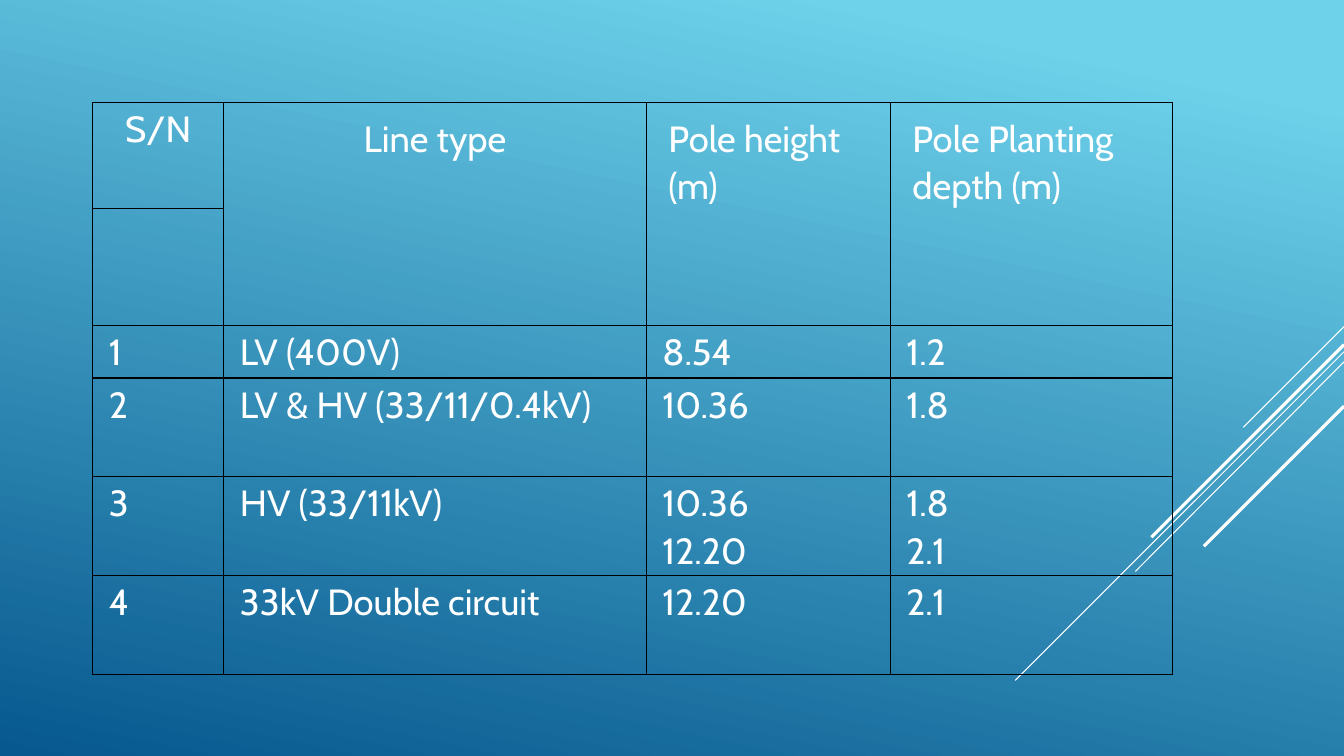
"""Build a slide with a table of pole heights and planting depths."""
from lxml.etree import SubElement
from pptx import Presentation
from pptx.dml.color import RGBColor
from pptx.enum.shapes import MSO_CONNECTOR
from pptx.enum.text import PP_ALIGN
from pptx.oxml.ns import qn
from pptx.util import Inches, Pt

COLORS = {"sky": "6ED2EB", "deep": "06588E", "text": "FFFFFF", "border": "000000"}
FONT = "Cabin"
SLIDE_W, SLIDE_H = 13.33, 7.5
COL_WIDTHS = [1.3, 4.19, 2.42, 2.8]
ROW_HEIGHTS = [1.05, 1.16, 0.52, 0.98, 0.98, 0.98]
BODY_INSETS = (0.16, 0.02, 0.16, 0)
HEADER_INSETS = (0.22, 0.11, 0.22, 0.11)
HEADERS = ["S/N", "Line type", "Pole height (m)", "Pole Planting depth (m)"]
POLES = [
    ["1", "LV (400V)", "8.54", "1.2"],
    ["2", "LV & HV (33/11/0.4kV)", "10.36", "1.8"],
    ["3", "HV (33/11kV)", "10.36\n12.20", "1.8\n2.1"],
    ["4", "33kV Double circuit", "12.20", "2.1"],
]
STREAKS = [
    (3.24, 12.33, 4.24, 0.75),
    (3.49, 10.07, 6.75, 0.75),
    (3.59, 11.26, 5.67, 0.75),
    (3.42, 11.42, 5.33, 2.25),
    (4.03, 11.94, 5.42, 2.25),
]


def rgb(name):
    """Return a named colour."""
    return RGBColor.from_string(COLORS[name])


def paint_background(s):
    """Fill the slide with a slanted gradient."""
    fill = s.background.fill
    fill.gradient()
    fill.gradient_angle = 360 - 102
    for stop, name, position in zip(fill.gradient_stops, ("sky", "deep"), (0.1, 1)):
        stop.color.rgb = rgb(name)
        stop.position = position


def add_streak(s, top, left, bottom, weight):
    """Draw a diagonal line from the right edge of the slide."""
    sp = s.shapes.add_connector(
        MSO_CONNECTOR.STRAIGHT,
        Inches(SLIDE_W), Inches(top), Inches(left), Inches(bottom),
    )
    sp.line.color.rgb = rgb("text")
    sp.line.width = Pt(weight)
    SubElement(sp._element.spPr, qn("a:effectLst"))


def style_cell(cell):
    """Give a cell thin borders and no fill."""
    tc_pr = cell._tc.get_or_add_tcPr()
    for side in ("a:lnL", "a:lnR", "a:lnT", "a:lnB"):
        ln = SubElement(tc_pr, qn(side), w=str(Pt(1)))
        solid = SubElement(ln, qn("a:solidFill"))
        SubElement(solid, qn("a:srgbClr"), val=COLORS["border"])
    cell.fill.background()


def write_cell(cell, text, insets=BODY_INSETS, align=PP_ALIGN.LEFT):
    """Write one paragraph per line of text into a cell."""
    (cell.margin_left, cell.margin_top,
     cell.margin_right, cell.margin_bottom) = map(Inches, insets)
    tf = cell.text_frame
    for i, line in enumerate(text.split("\n")):
        p = tf.add_paragraph() if i else tf.paragraphs[0]
        p.alignment = align
        p.line_spacing = 1.07
        r = p.add_run()
        r.text = line
        r.font.name = FONT
        r.font.size = Pt(26)
        r.font.color.rgb = rgb("text")


def add_pole_table(s):
    """Add the table with its merged headers and pole rows."""
    table = s.shapes.add_table(
        len(ROW_HEIGHTS), len(COL_WIDTHS), Inches(0.92), Inches(1.02),
        Inches(sum(COL_WIDTHS)), Inches(sum(ROW_HEIGHTS)),
    ).table
    table.first_row = table.horz_banding = False
    for column, width in zip(table.columns, COL_WIDTHS):
        column.width = Inches(width)
    for row, height in zip(table.rows, ROW_HEIGHTS):
        row.height = Inches(height)
    for cell in table.iter_cells():
        style_cell(cell)
    for c, header in enumerate(HEADERS):
        cell = table.cell(0, c)
        if c:
            cell.merge(table.cell(1, c))
        write_cell(cell, header, HEADER_INSETS if c else BODY_INSETS,
                   PP_ALIGN.CENTER if c < 2 else PP_ALIGN.LEFT)
    for r, pole in enumerate(POLES, start=2):
        for c, text in enumerate(pole):
            write_cell(table.cell(r, c), text)


def main():
    """Build and save the presentation."""
    prs = Presentation()
    prs.slide_width, prs.slide_height = Inches(SLIDE_W), Inches(SLIDE_H)
    s = prs.slides.add_slide(prs.slide_layouts[6])
    paint_background(s)
    for streak in STREAKS:
        add_streak(s, *streak)
    add_pole_table(s)
    prs.save("out.pptx")


if __name__ == "__main__":
    main()
